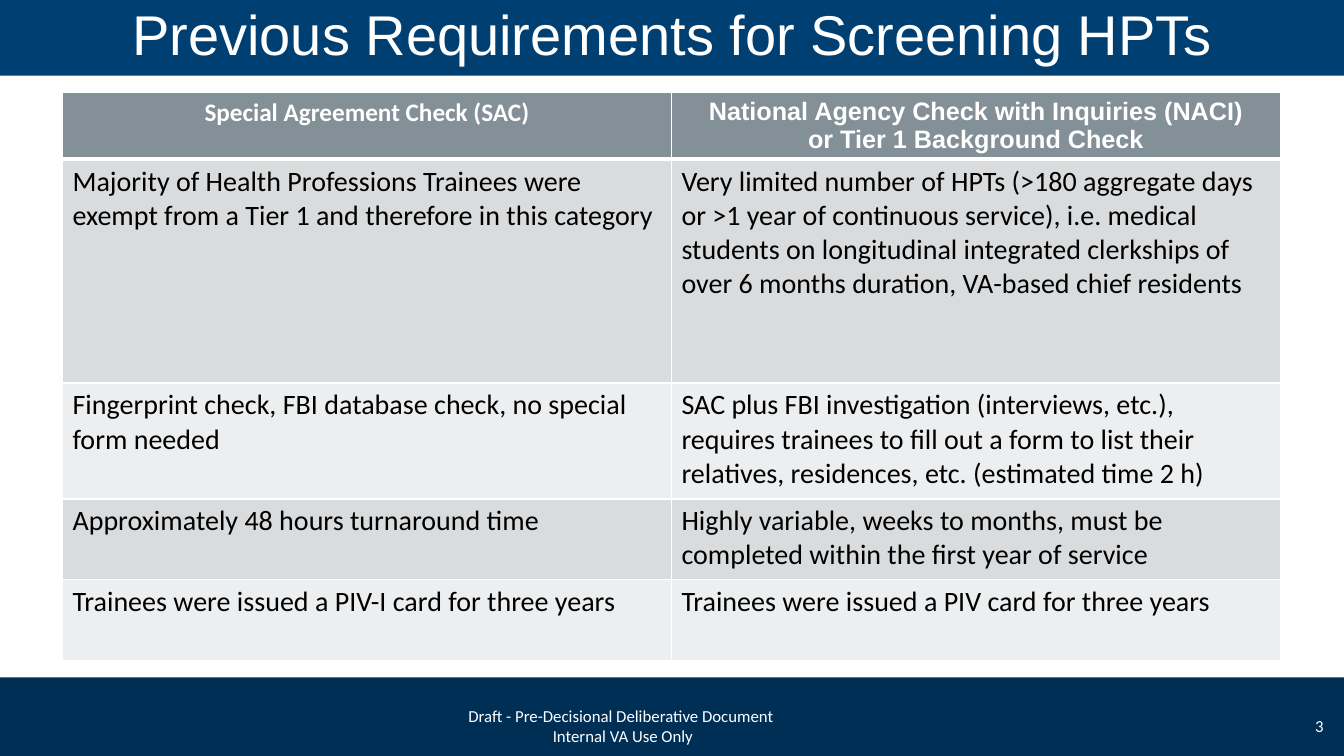
from lxml.etree import SubElement
from pptx import Presentation
from pptx.dml.color import RGBColor
from pptx.enum.shapes import MSO_SHAPE
from pptx.enum.text import MSO_ANCHOR, PP_ALIGN
from pptx.oxml.ns import qn
from pptx.util import Inches, Pt

WIDTH, HEIGHT = Inches(13.33), Inches(7.5)
COL, ROW = WIDTH / 160, HEIGHT / 90

WHITE = RGBColor(0xFF, 0xFF, 0xFF)
BLACK = RGBColor(0x00, 0x00, 0x00)
TITLE_BLUE = RGBColor(0x00, 0x3F, 0x72)
FOOTER_BLUE = RGBColor(0x00, 0x2F, 0x56)
HEADER_GRAY = RGBColor(0x83, 0x90, 0x97)
BANDS = [RGBColor(0xD9, 0xDB, 0xDD), RGBColor(0xED, 0xEE, 0xEF)]

HEADERS = [
    (["Special Agreement Check (SAC)"], "Calibri"),
    (["National Agency Check with Inquiries (NACI)",
      "or Tier 1 Background Check"], "Arial"),
]
REQUIREMENTS = [
    ("Majority of Health Professions Trainees were exempt from a Tier 1 "
     "and therefore in this category",
     "Very limited number of HPTs (>180 aggregate days or >1 year of "
     "continuous service), i.e. medical students on longitudinal integrated "
     "clerkships of over 6 months duration, VA-based chief residents"),
    ("Fingerprint check, FBI database check, no special form needed",
     "SAC plus FBI investigation (interviews, etc.), requires trainees to "
     "fill out a form to list their relatives, residences, etc. "
     "(estimated time 2 h)"),
    ("Approximately 48 hours turnaround time",
     "Highly variable, weeks to months, must be completed within the first "
     "year of service"),
    ("Trainees were issued a PIV-I card for three years",
     "Trainees were issued a PIV card for three years"),
]
TABLE_ROWS = [7.44, 26.64, 13.8, 9.6, 9.6]


def place(col, row, cols, rows):
    return [round(v) for v in (col * COL, row * ROW, cols * COL, rows * ROW)]


def write(tf, lines, size, color=WHITE, font="Calibri", align=PP_ALIGN.LEFT,
          bold=False):
    for i, line in enumerate(lines):
        p = tf.paragraphs[0] if i == 0 else tf.add_paragraph()
        p.alignment = align
        r = p.add_run()
        r.text = line
        r.font.size = Pt(size)
        r.font.name = font
        r.font.bold = bold
        r.font.color.rgb = color


def add_band(s, box, color):
    sp = s.shapes.add_shape(MSO_SHAPE.RECTANGLE, *place(*box))
    sp.shadow.inherit = False
    sp.fill.solid()
    sp.fill.fore_color.rgb = color
    sp.line.fill.background()
    return sp


def add_text(s, box, lines, align, anchor=MSO_ANCHOR.TOP):
    tf = s.shapes.add_textbox(*place(*box)).text_frame
    tf.word_wrap = True
    tf.vertical_anchor = anchor
    write(tf, lines, 12, align=align)


def set_borders(cell, bottom):
    tc_pr = cell._tc.get_or_add_tcPr()
    widths = {"a:lnL": 1, "a:lnR": 1, "a:lnT": 1, "a:lnB": bottom}
    for i, (tag, width) in enumerate(widths.items()):
        ln = SubElement(tc_pr, qn(tag), w=str(Pt(width)))
        fill = SubElement(ln, qn("a:solidFill"))
        SubElement(fill, qn("a:srgbClr"), val=str(WHITE))
        tc_pr.insert(i, ln)


def style_cell(cell, color, bottom=1):
    cell.fill.solid()
    cell.fill.fore_color.rgb = color
    set_borders(cell, bottom)


def add_requirements_table(s):
    box = place(7.44, 11.04, 145, sum(TABLE_ROWS))
    table = s.shapes.add_table(len(TABLE_ROWS), len(HEADERS), *box).table
    for row, rows in zip(table.rows, TABLE_ROWS):
        row.height = round(rows * ROW)
    for c, (lines, font) in enumerate(HEADERS):
        cell = table.cell(0, c)
        style_cell(cell, HEADER_GRAY, bottom=3)
        write(cell.text_frame, lines, 18, font=font, align=PP_ALIGN.CENTER,
              bold=True)
    for r, texts in enumerate(REQUIREMENTS):
        for c, text in enumerate(texts):
            cell = table.cell(r + 1, c)
            style_cell(cell, BANDS[r % 2])
            write(cell.text_frame, [text], 20, BLACK)


def main():
    prs = Presentation()
    prs.slide_width, prs.slide_height = WIDTH, HEIGHT
    s = prs.slides.add_slide(prs.slide_layouts[6])
    add_band(s, (0, 80.64, 160, 9.36), FOOTER_BLUE)
    title = add_band(s, (0, -1, 160, 10), TITLE_BLUE)
    title.text_frame.vertical_anchor = MSO_ANCHOR.MIDDLE
    write(title.text_frame, ["Previous Requirements for Screening HPTs"], 40,
          font="Arial", align=PP_ALIGN.CENTER)
    add_requirements_table(s)
    add_text(s, (121.44, 84, 37.32, 4.8), ["3"], PP_ALIGN.RIGHT,
             MSO_ANCHOR.MIDDLE)
    add_text(s, (38.28, 83.4, 71.76, 4.8),
             ["Draft - Pre-Decisional Deliberative Document ",
              "Internal VA Use Only"], PP_ALIGN.CENTER)
    prs.save("out.pptx")


if __name__ == "__main__":
    main()
